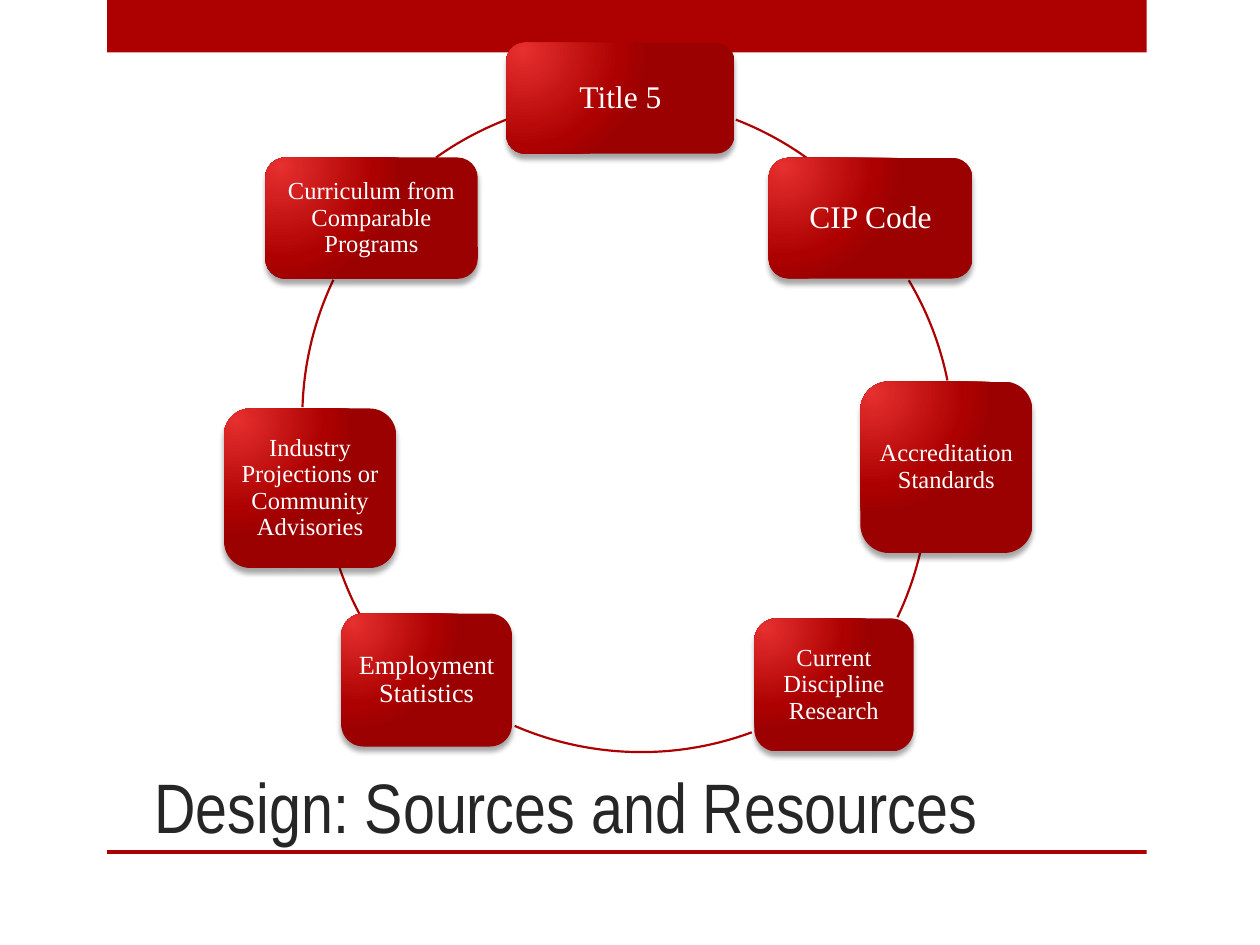
from dataclasses import dataclass

from lxml import etree
from pptx import Presentation
from pptx import util as u
from pptx.dml.color import RGBColor
from pptx.enum import shapes, text
from pptx.oxml import ns

COLORS = {
    "bright": "E62F2F",
    "red": "AD0101",
    "deep": "9C0101",
    "white": "FFFFFF",
    "title": "262626",
    "shadow": "000000",
}
RING_SIZE = 364.3
BAR_LEFT, BAR_WIDTH = 61.2, 594
DRAWING_NS = ns.nsdecls("a")

GRADIENT = f"""<a:gradFill {DRAWING_NS} rotWithShape="1"><a:gsLst>
<a:gs pos="0"><a:srgbClr val="{COLORS['bright']}"/></a:gs>
<a:gs pos="76000"><a:srgbClr val="{COLORS['red']}"/></a:gs>
<a:gs pos="100000"><a:srgbClr val="{COLORS['deep']}"/></a:gs></a:gsLst>
<a:path path="circle"><a:fillToRect l="15000" t="15000" r="100000" b="100000"/></a:path>
</a:gradFill>"""

SHADOW = f"""<a:effectLst {DRAWING_NS}>
<a:outerShdw blurRad="38100" dist="38100" dir="5400000" rotWithShape="0">
<a:srgbClr val="{COLORS['shadow']}"><a:alpha val="35000"/></a:srgbClr>
</a:outerShdw></a:effectLst>"""


@dataclass
class Source:
    label: str
    left: float
    top: float
    width: float
    height: float
    size: float


@dataclass
class Arc:
    left: float
    top: float
    start: float
    end: float


SOURCES = [
    Source("Title 5", 289.4, 24.4, 130.4, 63.4, 18),
    Source("CIP Code", 439.2, 90.2, 116.6, 69, 18),
    Source("Accreditation Standards", 491.6, 218, 98.4, 98, 14),
    Source("Current Discipline Research", 431.1, 353.4, 91, 76, 14),
    Source("Employment Statistics", 195, 350.6, 97.6, 76, 15),
    Source("Industry Projections or Community Advisories", 128, 233.4, 98.4, 91.2, 14),
    Source("Curriculum from Comparable Programs", 151.6, 90, 121.4, 69.4, 14),
]

ARCS = [
    Arc(172.8, 56.2, 291.1, 305.5),
    Arc(180.7, 71.3, 329.2, 348.6),
    Arc(166.3, 92.2, 13.2, 25.5),
    Arc(184.3, 65.5, 69.7, 113.4),
    Arc(184.3, 83.5, 152.2, 161.1),
    Arc(172.8, 56.2, 181.8, 205.5),
    Arc(172.8, 56.2, 234.5, 248.9),
]


def color(name: str) -> RGBColor:
    return RGBColor.from_string(COLORS[name])


def place(box, left: float, top: float, width: float, height: float) -> None:
    box.left, box.top = u.Pt(left), u.Pt(top)
    box.width, box.height = u.Pt(width), u.Pt(height)


def add_bar(page, top: float, height: float) -> None:
    bar = page.shapes.add_shape(
        shapes.MSO_SHAPE.RECTANGLE,
        u.Pt(BAR_LEFT), u.Pt(top), u.Pt(BAR_WIDTH), u.Pt(height))
    bar.shadow.inherit = False
    bar.fill.solid()
    bar.fill.fore_color.rgb = color("red")
    bar.line.fill.background()


def add_arc(page, arc: Arc) -> None:
    curve = page.shapes.add_shape(
        shapes.MSO_SHAPE.ARC,
        u.Pt(arc.left), u.Pt(arc.top), u.Pt(RING_SIZE), u.Pt(RING_SIZE))
    curve.adjustments[0] = arc.start * 0.6
    curve.adjustments[1] = arc.end * 0.6
    curve.shadow.inherit = False
    curve.fill.background()
    curve.line.color.rgb = color("red")
    curve.line.width = u.Pt(1.25)


def format_para(para, font: str, size: float, color_name: str) -> None:
    para.alignment = text.PP_ALIGN.CENTER
    para.font.name = font
    para.font.size = u.Pt(size)
    para.font.color.rgb = color(color_name)


def add_source(page, source: Source) -> None:
    box = page.shapes.add_shape(
        shapes.MSO_SHAPE.ROUNDED_RECTANGLE,
        u.Pt(source.left), u.Pt(source.top), u.Pt(source.width), u.Pt(source.height))
    box.line.fill.background()
    properties = box.element.spPr
    properties.find(ns.qn("a:prstGeom")).addnext(etree.fromstring(GRADIENT))
    properties.append(etree.fromstring(SHADOW))

    frame = box.text_frame
    frame.word_wrap = True
    frame.vertical_anchor = text.MSO_ANCHOR.MIDDLE
    frame.margin_left = frame.margin_right = u.Pt(4.5)
    frame.margin_top = frame.margin_bottom = u.Pt(4.5)
    para = frame.paragraphs[0]
    para.text = source.label
    para.line_spacing = 0.9
    format_para(para, "Times New Roman", source.size, "white")


def format_title(title) -> None:
    place(title, 56.2, 411.1, 534.2, 77)
    frame = title.text_frame
    frame.auto_size = text.MSO_AUTO_SIZE.NONE
    frame.vertical_anchor = text.MSO_ANCHOR.BOTTOM
    para = frame.paragraphs[0]
    para.text = "Design: Sources and Resources"
    format_para(para, "Arial Narrow", 40, "title")


def main() -> None:
    deck = Presentation()
    deck.slide_width, deck.slide_height = u.Pt(720), u.Pt(540)
    page = deck.slides.add_slide(deck.slide_layouts[5])
    add_bar(page, 0, 30)
    add_bar(page, 485.8, 2.2)
    format_title(page.shapes.title)
    for arc in ARCS:
        add_arc(page, arc)
    for source in SOURCES:
        add_source(page, source)
    deck.save("out.pptx")


if __name__ == "__main__":
    main()
